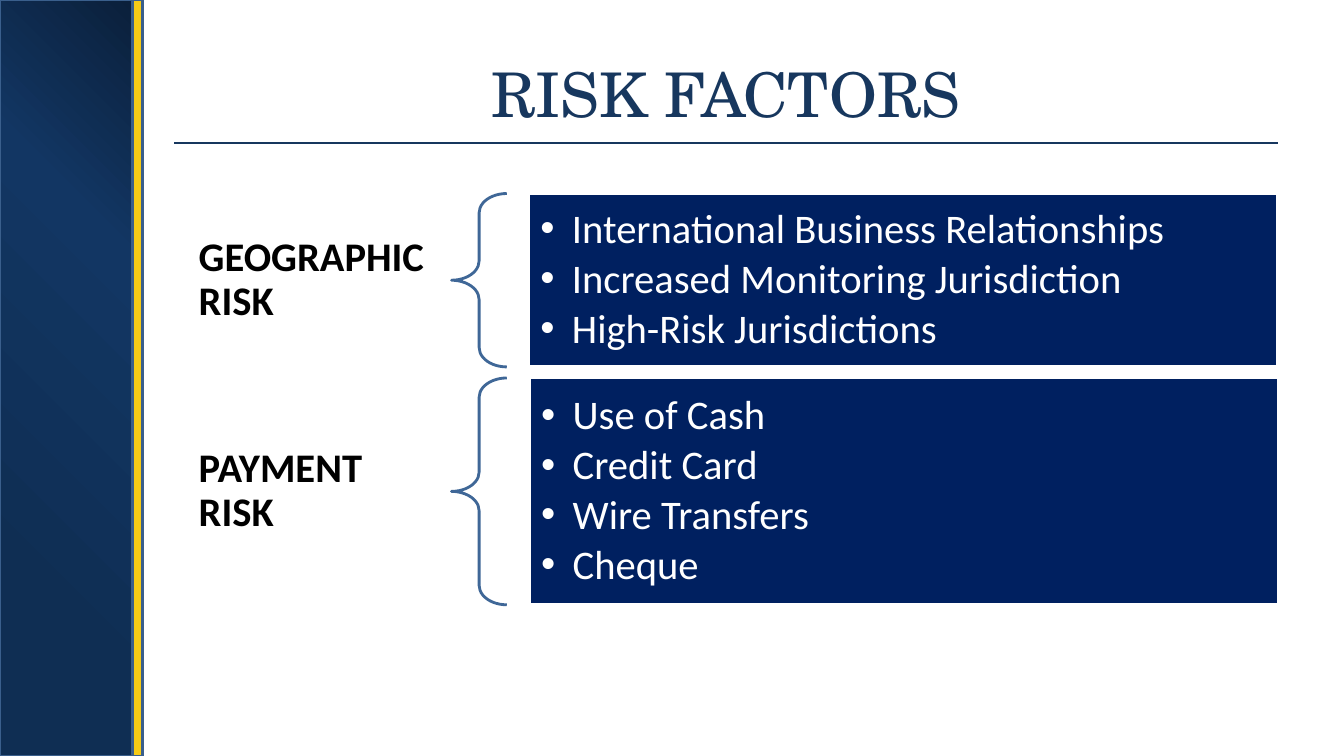
"""Build the risk factors slide: two risk groups, each braced to its list of factors."""
from lxml import etree
from pptx import Presentation
from pptx.dml.color import RGBColor
from pptx.enum import shapes, text
from pptx.oxml import parse_xml
from pptx.oxml.ns import nsdecls, qn
from pptx.util import Pt

THEME = {
    "navy": "002060", "rule": "17375E", "yellow": "F6CB16", "white": "FFFFFF",
    "black": "000000", "edge": "3A5F8C", "brace": "3F6797",
    "band": [(0, "0B203B"), (29, "123663"), (79, "0F2E53")],
    "title": {"name": "TeX Gyre Schola", "size": Pt(44), "bold": False},
    "label": {"name": "Calibri", "size": Pt(29), "bold": True},
    "item": {"name": "Calibri", "size": Pt(29), "bold": False},
}
GROUPS = [
    ("GEOGRAPHIC RISK", 138.24, 123.84, 377.5,
     ["International Business Relationships", "Increased Monitoring Jurisdiction",
      "High-Risk Jurisdictions"]),
    ("PAYMENT RISK", 270, 162, 378,
     ["Use of Cash", "Credit Card", "Wire Transfers", "Cheque"]),
]
LABEL_H = 76.32


def add_shape(kind, box, fill, line):
    sp = s.shapes.add_shape(kind, *map(Pt, box))
    sp.shadow.inherit = False
    if fill:
        sp.fill.solid()
        sp.fill.fore_color.rgb = RGBColor.from_string(THEME[fill])
    else:
        sp.fill.background()
    sp.line.color.rgb = RGBColor.from_string(THEME[line])
    sp.line.width = Pt(2)
    return sp


def write(sp, lines, style, color, inset, para, bullet=False):
    tf = sp.text_frame
    frame = {"word_wrap": True, "auto_size": text.MSO_AUTO_SIZE.NONE,
             "vertical_anchor": text.MSO_ANCHOR.MIDDLE,
             "margin_left": Pt(inset[0]), "margin_right": Pt(inset[0]),
             "margin_top": Pt(inset[1]), "margin_bottom": Pt(inset[1])}
    for name, value in frame.items():
        setattr(tf, name, value)
    for i, line in enumerate(lines):
        p = tf.add_paragraph() if i else tf.paragraphs[0]
        for name, value in para.items():
            setattr(p, name, value)
        if bullet:
            pPr = p._p.get_or_add_pPr()
            pPr.set("marL", str(Pt(22.5)))
            pPr.set("indent", str(Pt(-22.5)))
            etree.SubElement(pPr, qn("a:buFont")).set("typeface", "Arial")
            etree.SubElement(pPr, qn("a:buChar")).set("char", "•")
        r = p.add_run()
        r.text = line
        for name, value in THEME[style].items():
            setattr(r.font, name, value)
        r.font.color.rgb = RGBColor.from_string(THEME[color])


prs = Presentation()
prs.slide_width, prs.slide_height = Pt(960), Pt(540)
s = prs.slides.add_slide(prs.slide_layouts[5])

band = add_shape(shapes.MSO_SHAPE.RECTANGLE, (0, 0, 94.5, 540), None, "edge")
stops = "".join(f'<a:gs pos="{pos * 1000}"><a:srgbClr val="{rgb}"/></a:gs>'
                for pos, rgb in THEME["band"])
grad = parse_xml(f'<a:gradFill {nsdecls("a")} rotWithShape="1"><a:gsLst>{stops}</a:gsLst>'
                 '<a:path path="circle"><a:fillToRect l="100000" b="100000"/></a:path>'
                 '</a:gradFill>')
spPr = band._element.spPr
spPr.replace(spPr.find(qn("a:noFill")), grad)
add_shape(shapes.MSO_SHAPE.RECTANGLE, (94.5, 0, 7.5, 540), "yellow", "edge")

title = s.shapes.title
title.left, title.top, title.width, title.height = map(Pt, (124.5, 21, 788.5, 90))
write(title, ["RISK FACTORS"], "title", "rule", (7.2, 3.6),
      {"alignment": text.PP_ALIGN.CENTER})

for name, top, height, left, factors in GROUPS:
    label = s.shapes.add_textbox(
        *map(Pt, (125.5, top + (height - LABEL_H) / 2, 196.5, LABEL_H)))
    write(label, [name], "label", "black", (16.5, 5.75),
          {"alignment": text.PP_ALIGN.LEFT, "line_spacing": 0.9})
    brace = add_shape(shapes.MSO_SHAPE.LEFT_BRACE, (322.5, top, 39.5, height), None, "brace")
    brace.adjustments[0] = 0.35
    panel = add_shape(shapes.MSO_SHAPE.RECTANGLE, (left, top, 535, height), "navy", "white")
    write(panel, factors, "item", "white", (8.6, 8.6),
          {"alignment": text.PP_ALIGN.LEFT, "line_spacing": 0.9, "space_after": Pt(4.35)},
          bullet=True)

rule = s.shapes.add_connector(shapes.MSO_CONNECTOR.STRAIGHT, *map(Pt, (124.5, 102.25, 913, 102.25)))
rule.line.color.rgb = RGBColor.from_string(THEME["rule"])
rule.line.width = Pt(1.5)
etree.SubElement(rule._element.spPr, qn("a:effectLst"))

prs.save("out.pptx")
